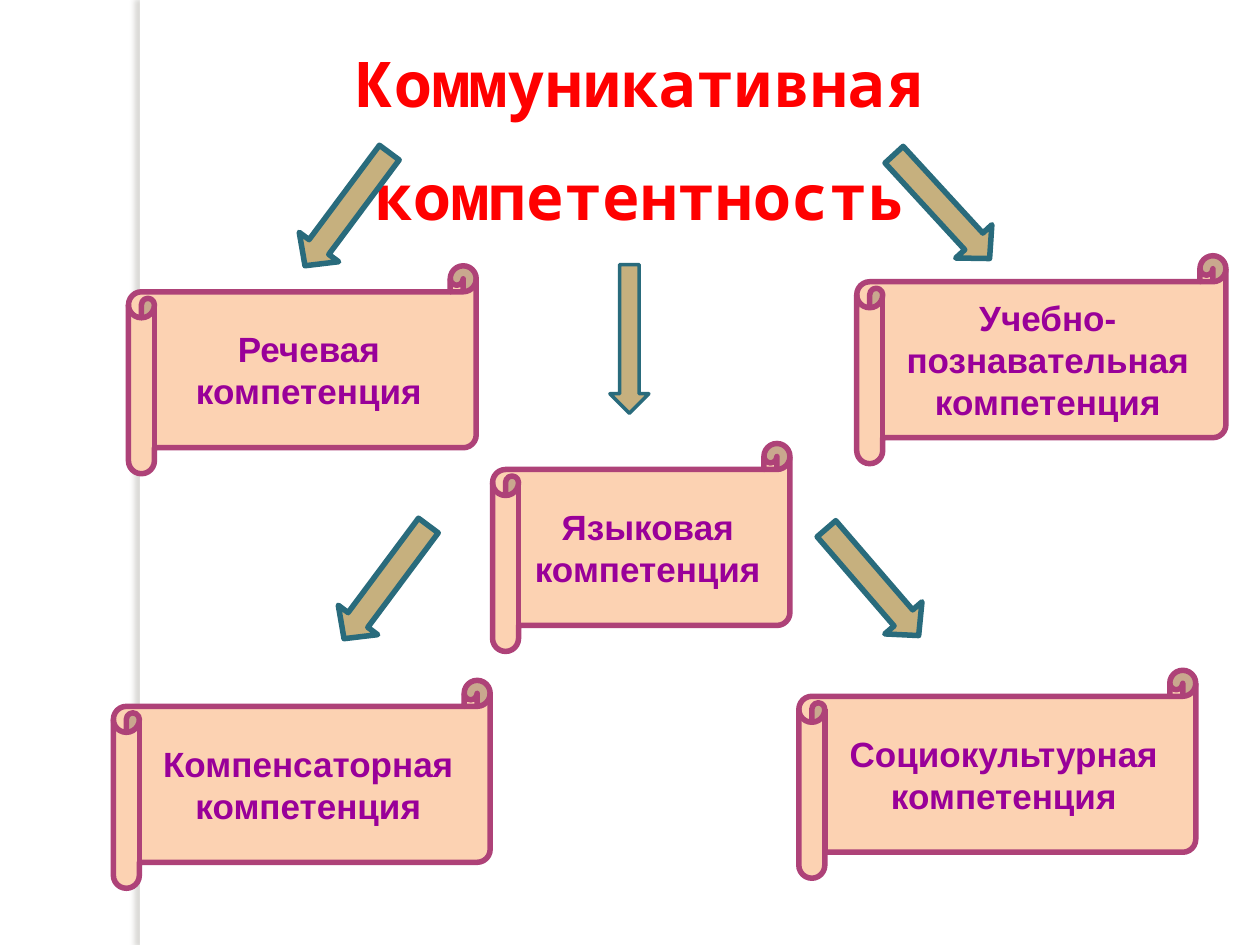
import pptx
import pptx.util
import pptx.dml.color
import pptx.enum.shapes
import pptx.enum.text
import pptx.oxml
import pptx.oxml.ns

KIND = pptx.enum.shapes.MSO_SHAPE
HUES = {
    "page": "FFFFFF", "shade": "736F63", "title": "FF0000",
    "scroll": "FCD2B2", "edge": "AE4278", "label": "990099",
    "arrow": "C6B07E", "rim": "296B7C",
}
COLS, ROWS = 100, 75  # grid laid over the slide

deck = pptx.Presentation()
deck.slide_width = pptx.util.Inches(10)
deck.slide_height = pptx.util.Inches(7.5)
slide = deck.slides.add_slide(deck.slide_layouts[6])


def hue(name):
    return pptx.dml.color.RGBColor.from_string(HUES[name])


def place(box):
    """Turn columns and rows into slide lengths."""
    left, top, wide, high = box
    col, row = deck.slide_width / COLS, deck.slide_height / ROWS
    return [round(n) for n in (left * col, top * row, wide * col, high * row)]


def write(shape, text, size=20, font="Arial", color="label", space=None, anchor="MIDDLE"):
    frame = shape.text_frame
    frame.word_wrap = True
    frame.vertical_anchor = pptx.enum.text.MSO_ANCHOR[anchor]
    para = frame.paragraphs[0]
    para.alignment = pptx.enum.text.PP_ALIGN.CENTER
    if space:
        para.line_spacing = space
    run = para.add_run()
    run.text = text
    run.font.size = pptx.util.Pt(size)
    run.font.name = font
    run.font.bold = True
    run.font.color.rgb = hue(color)


def draw(kind, box, fill, line=None, width=3.15):
    shape = slide.shapes.add_shape(kind, *place(box))
    shape.shadow.inherit = False
    shape.fill.solid()
    shape.fill.fore_color.rgb = hue(fill)
    if line:
        shape.line.color.rgb = hue(line)
        shape.line.width = pptx.util.Pt(width)
    else:
        shape.line.fill.background()
    return shape


def strip(box):
    """White side strip with a soft shadow to its left."""
    shape = draw(KIND.RECTANGLE, box, "page")
    glow = pptx.oxml.parse_xml(
        f'<a:outerShdw {pptx.oxml.ns.nsdecls("a")} blurRad="38100" dist="38100" '
        f'dir="10800000" algn="tl" rotWithShape="0"><a:srgbClr val="{HUES["shade"]}">'
        '<a:alpha val="25000"/></a:srgbClr></a:outerShdw>')
    shape._element.spPr.find(pptx.oxml.ns.qn("a:effectLst")).append(glow)


def title(box, text):
    shape = slide.shapes.add_textbox(*place(box))
    write(shape, text, size=36, font="Noto Sans Mono", color="title",
          space=1.5, anchor="TOP")


def scroll(box, text):
    write(draw(KIND.HORIZONTAL_SCROLL, box, "scroll", "edge"), text)


def arrow(box, turn=0, head=0.5, width=3.15):
    shape = draw(KIND.DOWN_ARROW, box, "arrow", "rim", width)
    shape.adjustments[0] = 0.5
    shape.adjustments[1] = head
    shape.rotation = turn


# Side strip and title
strip((11.1, 0, 0.8, ROWS))
title((12.5, 0, 76.6, 10.1), "Коммуникативная компетентность")

# Scrolls: left, top, width, first word
HIGH = 16.5
for left, top, wide, word in (
    (10.2, 21.1, 27.6, "Речевая"),
    (39.1, 35.2, 23.6, "Языковая"),
    (9, 54, 29.9, "Компенсаторная"),
    (68, 20.3, 29.3, "Учебно-познавательная"),
    (63.4, 53.2, 31.5, "Социокультурная"),
):
    scroll((left, top, wide, HIGH), f"{word} компетенция")

# Middle arrow, then the four slanted ones
arrow((48.4, 21, 3.1, 11.8), width=2)
for left, top, turn in (
    (25.6, 11, 36.7), (72.8, 10.8, 317.4),
    (28.7, 40.6, 36.7), (67.3, 40.6, 319.2),
):
    arrow((left, top, 3.9, 11.2), turn, head=0.475)

deck.save("out.pptx")
